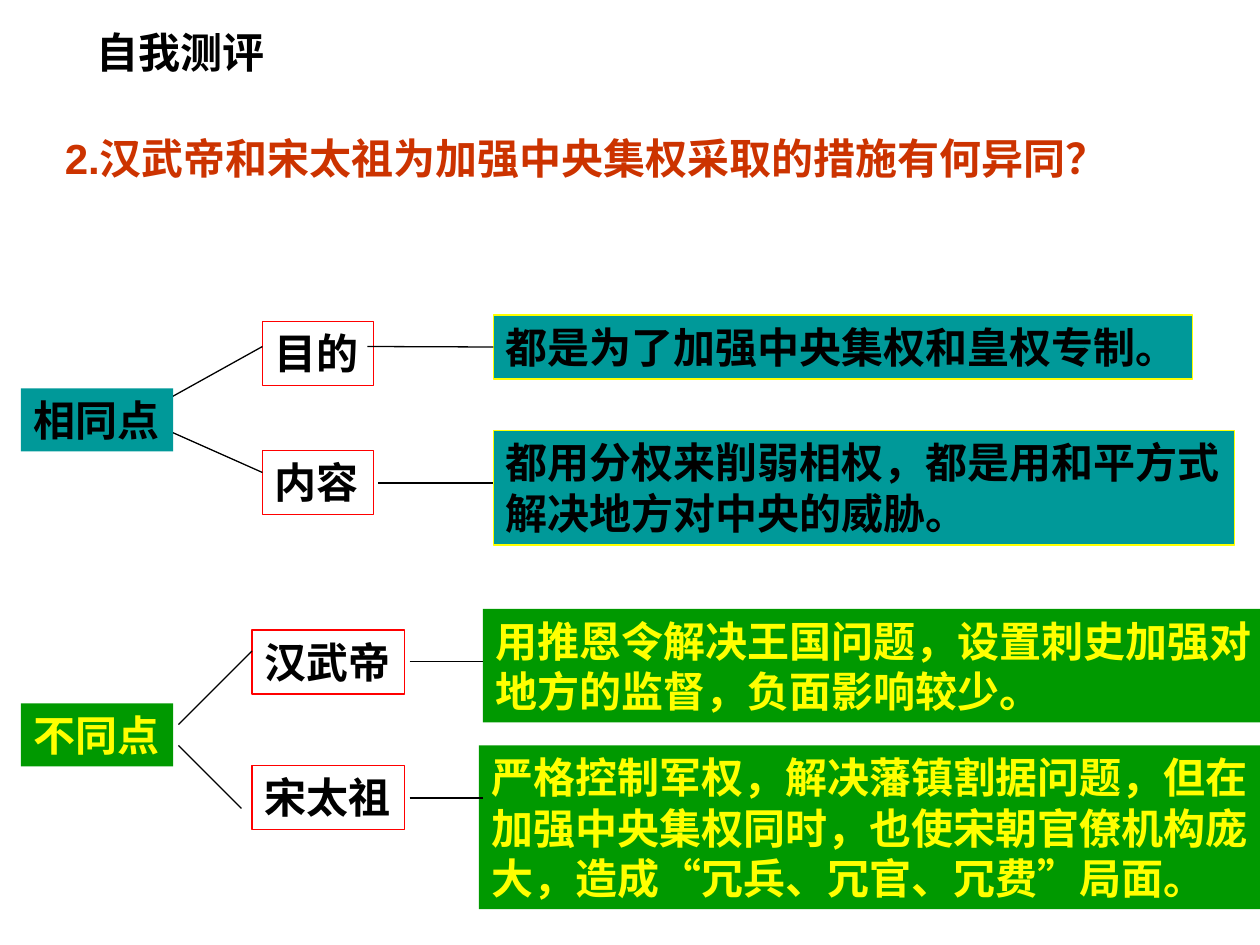
from pptx import Presentation
from pptx.dml.color import RGBColor as RGB
from pptx.enum.shapes import MSO_CONNECTOR as Conn, MSO_SHAPE as Shape
from pptx.enum.text import MSO_ANCHOR as Anchor, MSO_AUTO_SIZE as Fit, PP_ALIGN as Align
from pptx.oxml.ns import qn
from pptx.util import Inches, Pt
from lxml.etree import SubElement

BLACK = RGB(0x00, 0x00, 0x00)
RED = RGB(0xFF, 0x00, 0x00)
RUST = RGB(0xCC, 0x33, 0x00)
TEAL = RGB(0x00, 0x99, 0x99)
GREEN = RGB(0x00, 0x99, 0x00)
YELLOW = RGB(0xFF, 0xFF, 0x00)

COLS, ROWS = 120, 90        # grid of the whole slide
UNIT = Inches(10) // COLS   # one square cell
SERIF, SANS = "Times New Roman", "Arial"
LEAF_H = 6.1                # rows of a one-line box


def grid(*cells):
    return [round(cell * UNIT) for cell in cells]


def write(shape, lines, color, font):
    frame = shape.text_frame
    frame.text = "\n".join(lines)
    frame.word_wrap = False
    frame.auto_size = Fit.SHAPE_TO_FIT_TEXT
    frame.vertical_anchor = Anchor.TOP
    for para in frame.paragraphs:
        para.alignment = Align.LEFT
        para.font.size = Pt(24)
        para.font.bold = True
        para.font.name = font
        para.font.color.rgb = color


def add_box(slide, box, lines, color=BLACK, font=SERIF, fill=None, edge=None):
    shape = slide.shapes.add_shape(Shape.RECTANGLE, *grid(*box))
    shape.shadow.inherit = False
    if fill is None:
        shape.fill.background()
    else:
        shape.fill.solid()
        shape.fill.fore_color.rgb = fill
    if edge is None:
        shape.line.fill.background()
    else:
        shape.line.color.rgb = edge
        shape.line.width = Pt(0.75)
    write(shape, lines, color, font)
    return shape


def add_line(slide, start, end):
    line = slide.shapes.add_connector(Conn.STRAIGHT, *grid(*start, *end))
    line.line.color.rgb = BLACK
    line.line.width = Pt(0.75)
    SubElement(line._element.spPr, qn("a:effectLst"))
    return line


def add_label(slide, box, text, color):
    label = slide.shapes.add_textbox(*grid(*box))
    write(label, [text], color, SANS)


def add_tree(slide, box, root, leaves, fill, color, edge=None):
    """Root on the left, leaves in the middle, details on the right."""
    left, top, width, height = box

    def place(x, y):
        return left + x, top + y

    for leaf in leaves:
        add_box(slide, (*place(*leaf["at"]), leaf["wide"], LEAF_H),
                [leaf["name"]], edge=RED)
        detail = add_box(slide, (*place(*leaf["note"][:2]), *leaf["note"][2:]),
                         leaf["lines"], color, fill=fill, edge=edge)
        add_line(slide, *(place(*end) for end in leaf["fork"]))
        link = add_line(slide, *(place(*end) for end in leaf["link"]))
        if leaf.get("join"):
            link.end_connect(detail, 1)
    # The root covers the starts of its branches
    name, row, font = root
    add_box(slide, (*place(0, row), 14.5, 6), [name], color, font, fill)


def main():
    deck = Presentation()
    deck.slide_width, deck.slide_height = grid(COLS, ROWS)
    slide = deck.slides.add_slide(deck.slide_layouts[6])

    # Heading and question
    add_label(slide, (8, 1.9, 18.5, 6), "自我测评", BLACK)
    add_label(slide, (5, 12, 102.2, 6),
              "2.汉武帝和宋太祖为加强中央集权采取的措施有何异同？", RUST)

    # Similarities
    same = [
        dict(name="目的", at=(23, 0.6), wide=10.6, note=(45, 0, 66.6, 6.1),
             fork=((14, 8), (23, 3)), link=((33, 3), (45, 3)), join=True,
             lines=["都是为了加强中央集权和皇权专制。"]),
        dict(name="内容", at=(23, 12.9), wide=10.6, note=(45, 11, 70.6, 10.9),
             fork=((14, 11), (23, 15)), link=((34, 16), (45, 16)),
             lines=["都用分权来削弱相权，都是用和平方式",
                    "解决地方对中央的威胁。"]),
    ]
    add_tree(slide, (2, 30, 118, 22), ("相同点", 7, SANS), same,
             TEAL, BLACK, YELLOW)

    # Differences
    differ = [
        dict(name="汉武帝", at=(22, 2), wide=14.5, note=(44, 0, 74.4, 10.8),
             fork=((15, 11), (22, 4)), link=((37, 5), (44, 5)),
             lines=["用推恩令解决王国问题，设置刺史加强对",
                    "地方的监督，负面影响较少。"]),
        dict(name="宋太祖", at=(22, 14.9), wide=14.5, note=(43.6, 13, 74.4, 15.6),
             fork=((15, 13), (21, 19)), link=((37, 18), (44, 18)),
             lines=["严格控制军权，解决藩镇割据问题，但在",
                    "加强中央集权同时，也使宋朝官僚机构庞",
                    "大，造成“冗兵、冗官、冗费”局面。"]),
    ]
    add_tree(slide, (2, 58, 118, 29), ("不同点", 9, SERIF), differ,
             GREEN, YELLOW)

    deck.save("out.pptx")


if __name__ == "__main__":
    main()
